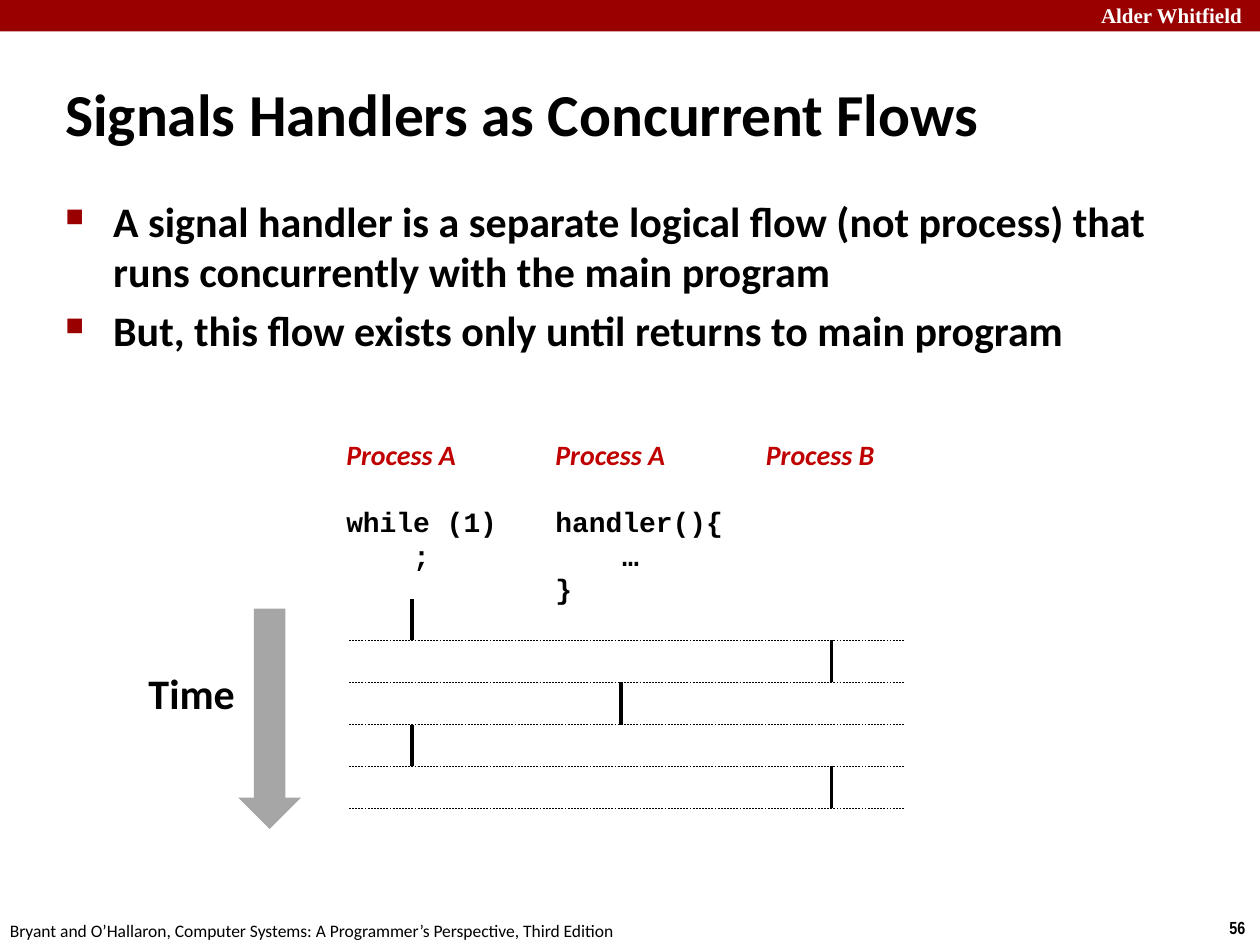
from dataclasses import dataclass

from lxml.etree import SubElement
from pptx import Presentation
from pptx.dml.color import RGBColor as RGB
from pptx.enum.dml import MSO_LINE
from pptx.enum.shapes import MSO_CONNECTOR, MSO_SHAPE
from pptx.enum.text import MSO_ANCHOR, MSO_AUTO_SIZE
from pptx.oxml.ns import qn
from pptx.util import Inches, Pt


@dataclass(frozen=True)
class Theme:
    black: str = "000000"
    white: str = "FFFFFF"
    banner: str = "990000"
    label: str = "C00000"
    arrow: str = "A6A6A6"
    body_font: str = "Calibri"
    code_font: str = "Courier New"
    banner_font: str = "Times New Roman"
    number_font: str = "Arial Narrow"
    title_size: int = 34
    body_size: int = 24
    code_size: int = 16
    banner_size: int = 12
    footer_size: int = 10


class SlideBuilder:
    def __init__(self, slide, theme):
        self.slide = slide
        self.theme = theme

    def text_box(self, left, top, width, height, wrap=True, anchor=MSO_ANCHOR.TOP):
        shape = self.slide.shapes.add_textbox(
            Inches(left), Inches(top), Inches(width), Inches(height))
        frame = shape.text_frame
        frame.word_wrap = wrap
        frame.auto_size = MSO_AUTO_SIZE.NONE
        frame.vertical_anchor = anchor
        return frame

    def paragraph(self, frame, text, size, color=None, font=None,
                  bold=True, italic=False, before=0, indent=0):
        """Fill the empty first paragraph, or add one after the others."""
        paragraph = frame.paragraphs[0] if not frame.text else frame.add_paragraph()
        paragraph.text = text
        paragraph.space_before = Pt(before)
        paragraph.font.size = Pt(size)
        paragraph.font.name = font or self.theme.body_font
        paragraph.font.bold = bold
        paragraph.font.italic = italic
        paragraph.font.color.rgb = RGB.from_string(color or self.theme.black)
        if indent:
            paragraph._p.get_or_add_pPr().set("marL", str(Inches(indent)))
        return paragraph

    def label(self, box, text, size, wrap=False, anchor=MSO_ANCHOR.TOP, **style):
        self.paragraph(self.text_box(*box, wrap, anchor), text, size, **style)

    def bullet(self, frame, text, hang=0.38):
        paragraph = self.paragraph(frame, text, self.theme.body_size,
                                   before=5, indent=hang)
        properties = paragraph._p.get_or_add_pPr()
        properties.set("indent", str(-Inches(hang)))
        defaults = properties.find(qn("a:defRPr"))
        color = SubElement(properties, qn("a:buClr"))
        SubElement(color, qn("a:srgbClr"), val=self.theme.banner)
        SubElement(properties, qn("a:buSzPct"), val="60000")
        SubElement(properties, qn("a:buChar"), char="■")
        properties.append(defaults)  # the schema wants defRPr after the bullet

    def code_column(self, box, heading, code_lines):
        """Heading over code; each code line is (indent in inches, text)."""
        theme = self.theme
        frame = self.text_box(*box, wrap=False)
        self.paragraph(frame, heading, theme.code_size, theme.label, italic=True)
        for number, (indent, text) in enumerate(code_lines):
            self.paragraph(frame, text, theme.code_size, font=theme.code_font,
                           before=0 if number else 19.5, indent=indent)

    def block(self, preset, left, top, width, height, color):
        shape = self.slide.shapes.add_shape(
            preset, Inches(left), Inches(top), Inches(width), Inches(height))
        shape.shadow.inherit = False
        shape.fill.solid()
        shape.fill.fore_color.rgb = RGB.from_string(color)
        shape.line.fill.background()

    def line(self, x1, y1, x2, y2, weight, dash=None):
        connector = self.slide.shapes.add_connector(
            MSO_CONNECTOR.STRAIGHT, Inches(x1), Inches(y1), Inches(x2), Inches(y2))
        connector.line.color.rgb = RGB.from_string(self.theme.black)
        connector.line.width = Pt(weight)
        if dash:
            connector.line.dash_style = dash
        SubElement(connector._element.spPr, qn("a:effectLst"))


def main():
    presentation = Presentation()
    presentation.slide_width = Inches(10)
    presentation.slide_height = Inches(7.5)
    theme = Theme()
    builder = SlideBuilder(
        presentation.slides.add_slide(presentation.slide_layouts[6]), theme)

    builder.block(MSO_SHAPE.RECTANGLE, 0, 0, 10, 0.25, theme.banner)
    builder.label((8.64, -0.03, 1.43, 0.3), "Alder Whitfield", theme.banner_size,
                  wrap=True, color=theme.white, font=theme.banner_font)
    builder.label((9.66, 7.23, 0.34, 0.27), "56", theme.footer_size,
                  font=theme.number_font)
    builder.label((-0.02, 7.25, 5.08, 0.27),
                  "Bryant and O’Hallaron, Computer Systems: "
                  "A Programmer’s Perspective, Third Edition",
                  theme.footer_size, bold=False)

    builder.label((0.42, 0.48, 8.3, 0.83), "Signals Handlers as Concurrent Flows",
                  theme.title_size, wrap=True, anchor=MSO_ANCHOR.MIDDLE)
    body = builder.text_box(0.42, 1.5, 9.09, 1.42)
    builder.bullet(body, "A signal handler is a separate logical flow (not process) "
                         "that runs concurrently with the main program")
    builder.bullet(body, "But, this flow exists only until returns to main program")

    code_indent = 0.53  # four monospaced characters
    builder.code_column((2.65, 3.42, 1.4, 1.17), "Process A",
                        [(0, "while (1)"), (code_indent, ";")])
    builder.code_column((4.31, 3.42, 1.54, 1.44), "Process A",
                        [(0, "handler(){"), (code_indent, "…"), (0, "}")])
    builder.code_column((5.98, 3.42, 1.08, 0.37), "Process B", [])

    main_flow, handler_flow, process_b = 3.27, 4.93, 6.6
    start, step = 4.75, 1 / 3
    schedule = [main_flow, process_b, handler_flow, main_flow, process_b]
    for slot, x in enumerate(schedule):
        top, bottom = start + slot * step, start + (slot + 1) * step
        builder.line(x, top, x, bottom, 2)
        builder.line(2.77, bottom, 7.18, bottom, 0.25, MSO_LINE.DASH)

    builder.label((1.08, 5.25, 0.89, 0.5), "Time", theme.body_size, wrap=True)
    builder.block(MSO_SHAPE.DOWN_ARROW, 1.89, 4.83, 0.5, 1.75, theme.arrow)

    presentation.save("out.pptx")


if __name__ == "__main__":
    main()
